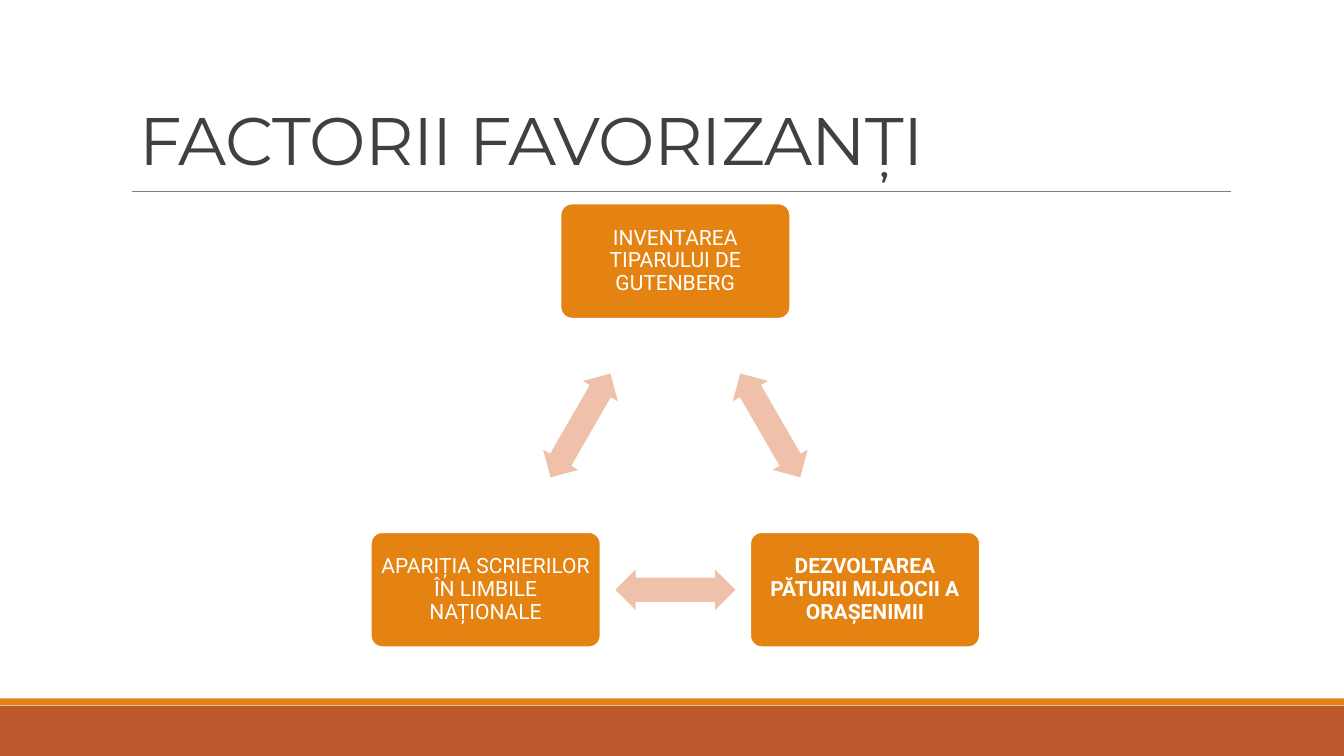
from math import cos, radians, sin

from pptx import Presentation
from pptx.dml.color import RGBColor
from pptx.enum.shapes import MSO_CONNECTOR, MSO_SHAPE as Shape
from pptx.enum.text import MSO_ANCHOR as Anchor, MSO_AUTO_SIZE as AutoSize, PP_ALIGN as Align
from pptx.oxml.ns import qn
from pptx.util import Cm, Pt

ORANGE, RUST, PEACH = "E48312", "BD582C", "EFC1AB"
WHITE, GRAY, DARK = "FFFFFF", "808080", "404040"
PAGE_W, PAGE_H = 33.87, 19.05
CENTER_X, CENTER_Y, RADIUS = 17.02, 12.1, 5.52
BOX_W, BOX_H = 5.79, 2.9
ARROW_W, ARROW_H = 3.02, 1.02

# Clockwise from the top; the flag marks bold text
FACTORS = [
    ("INVENTAREA TIPARULUI DE GUTENBERG", False),
    ("DEZVOLTAREA PĂTURII MIJLOCII A ORAȘENIMII", True),
    ("APARIȚIA SCRIERILOR ÎN LIMBILE NAȚIONALE", False),
]


def color(value):
    return RGBColor.from_string(value)


def format_text(para, font, size, fill, bold=False):
    for span in para.runs:
        span.font.name = font
        span.font.size = Pt(size)
        span.font.bold = bold
        span.font.color.rgb = color(fill)


def add_filled(page, kind, left, top, width, height, fill):
    shape = page.shapes.add_shape(kind, Cm(left), Cm(top), Cm(width), Cm(height))
    shape.shadow.inherit = False
    shape.fill.solid()
    shape.fill.fore_color.rgb = color(fill)
    shape.line.fill.background()
    return shape


def add_rule(page, left, right, y):
    rule = page.shapes.add_connector(MSO_CONNECTOR.STRAIGHT, Cm(left), Cm(y), Cm(right), Cm(y))
    rule.line.color.rgb = color(GRAY)
    rule.line.width = Pt(0.5)
    properties = rule._element.spPr
    properties.append(properties.makeelement(qn("a:effectLst"), {}))


def set_title(page, text):
    title = page.shapes.title
    title.left, title.top, title.width, title.height = Cm(3.25), Cm(0.61), Cm(27.94), Cm(4.04)
    frame = title.text_frame
    frame.text = text
    frame.auto_size = AutoSize.NONE
    frame.vertical_anchor = Anchor.BOTTOM
    para = frame.paragraphs[0]
    para.alignment = Align.LEFT
    para.line_spacing = 0.85
    format_text(para, "Montserrat", 48, DARK)
    para.runs[0].font._element.set("spc", "-50")


def add_factor(page, x, y, text, bold):
    """Add a rounded box centred on (x, y)."""
    box = add_filled(page, Shape.ROUNDED_RECTANGLE, x - BOX_W / 2, y - BOX_H / 2, BOX_W, BOX_H, ORANGE)
    box.adjustments[0] = 0.1
    box.line.color.rgb = color(WHITE)
    box.line.width = Pt(1.25)
    frame = box.text_frame
    frame.text = text
    frame.word_wrap = True
    frame.vertical_anchor = Anchor.MIDDLE
    frame.margin_left = frame.margin_right = frame.margin_top = frame.margin_bottom = Cm(0.15)
    para = frame.paragraphs[0]
    para.alignment = Align.CENTER
    para.line_spacing = 0.9
    format_text(para, "Roboto", 15, WHITE, bold)


def add_arrow(page, x, y, angle):
    """Add a double arrow centred on (x, y)."""
    arrow = add_filled(page, Shape.LEFT_RIGHT_ARROW, x - ARROW_W / 2, y - ARROW_H / 2,
                       ARROW_W, ARROW_H, PEACH)
    arrow.adjustments[0] = 0.6
    arrow.adjustments[1] = 0.5
    arrow.rotation = angle


def add_cycle(page, factors):
    """Set the factors evenly on a circle, with an arrow halfway between neighbours."""
    step = 360 / len(factors)
    turns = [radians(step * i - 90) for i in range(len(factors))]
    points = [(CENTER_X + RADIUS * cos(turn), CENTER_Y + RADIUS * sin(turn)) for turn in turns]
    for i, (text, bold) in enumerate(factors):
        x, y = points[i]
        next_x, next_y = points[(i + 1) % len(points)]
        add_factor(page, x, y, text, bold)
        add_arrow(page, (x + next_x) / 2, (y + next_y) / 2, step * (i + 0.5))


def main():
    deck = Presentation()
    deck.slide_width, deck.slide_height = Cm(PAGE_W), Cm(PAGE_H)
    page = deck.slides.add_slide(deck.slide_layouts[5])
    add_filled(page, Shape.RECTANGLE, 0, 17.78, PAGE_W, 1.27, RUST)
    add_filled(page, Shape.RECTANGLE, 0, 17.6, PAGE_W, 0.17, ORANGE)
    add_rule(page, 3.33, 31.01, 4.83)
    set_title(page, "FACTORII FAVORIZANȚI")
    add_cycle(page, FACTORS)
    deck.save("out.pptx")


if __name__ == "__main__":
    main()
